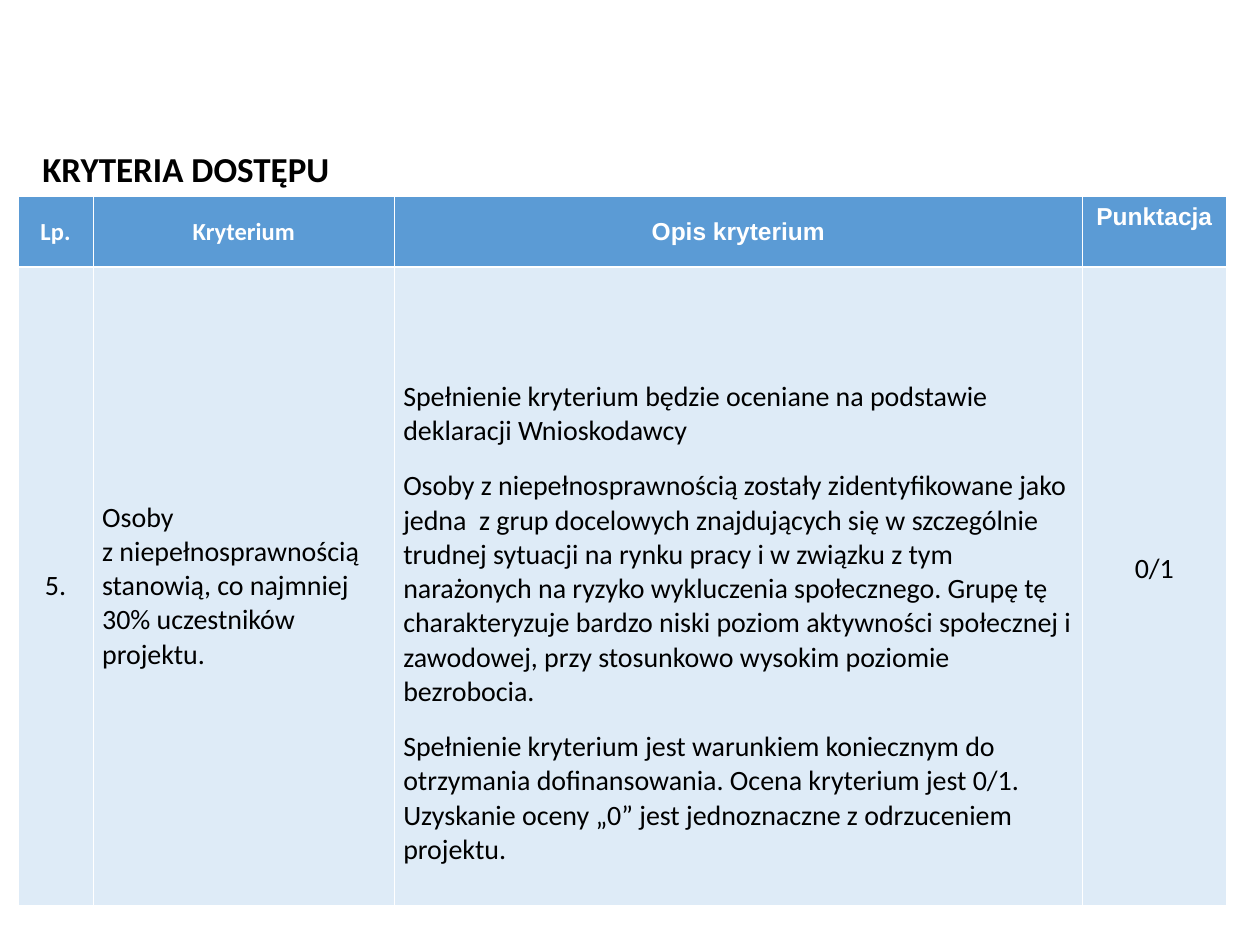
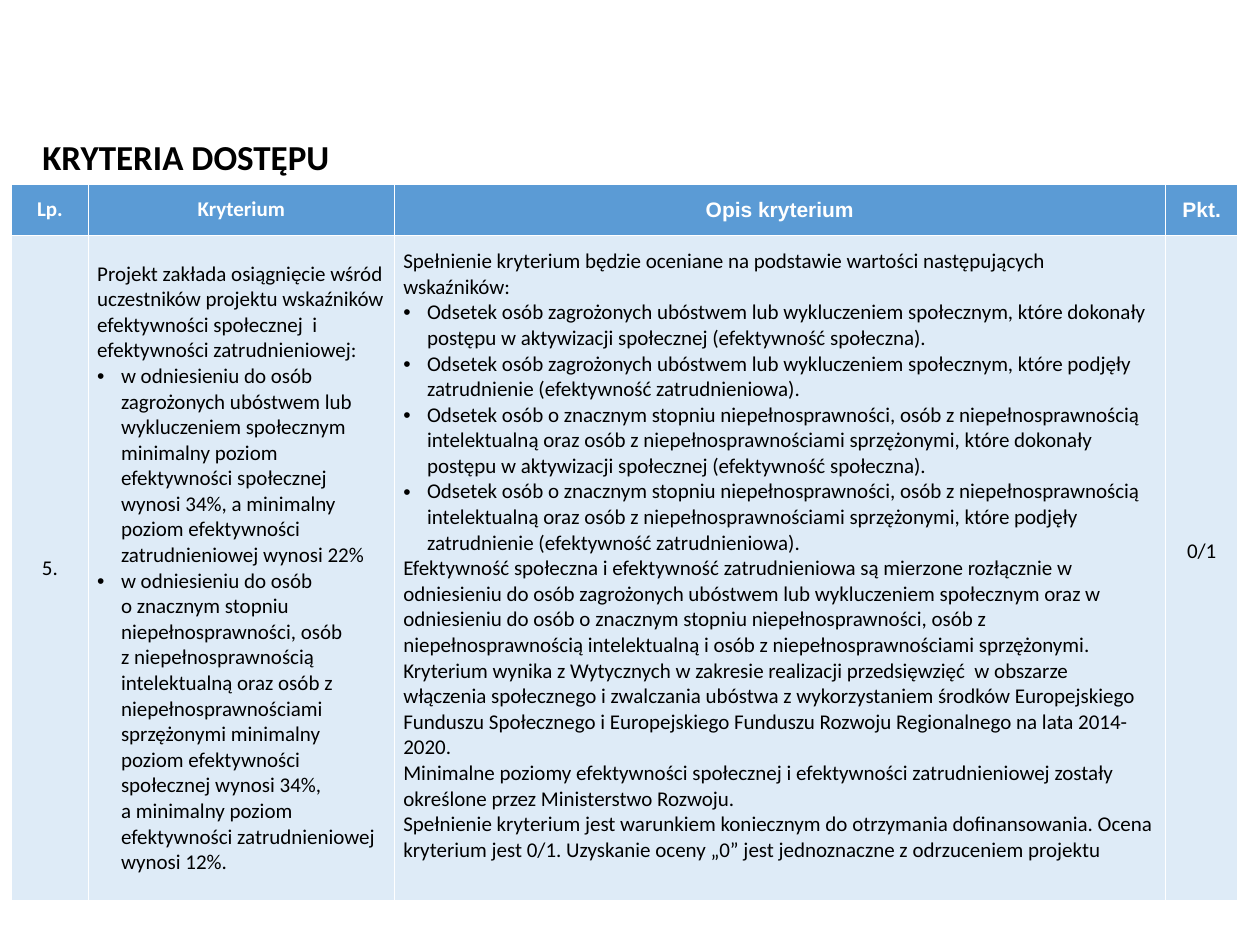
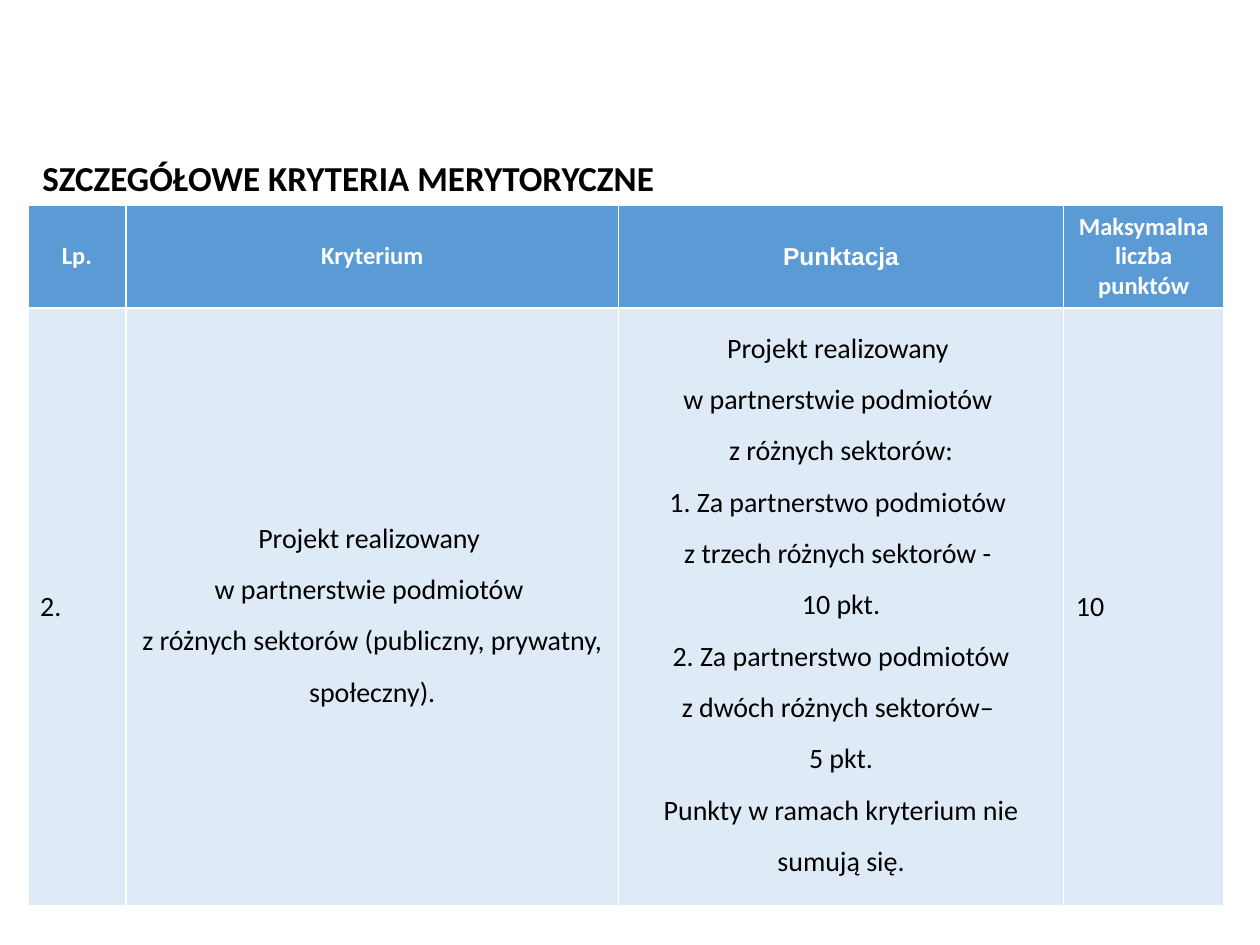
import copy

import lxml.etree
import pptx
import pptx.dml.color
import pptx.enum.text
import pptx.oxml.ns
import pptx.util

Cm, Pt = pptx.util.Cm, pptx.util.Pt
qn = pptx.oxml.ns.qn
ALIGN = pptx.enum.text.PP_ALIGN
ANCHOR = pptx.enum.text.MSO_ANCHOR

COLORS = {"text": "000000", "header": "5B9BD5", "header_text": "FFFFFF", "body": "DEEBF7"}
BULLET = "• "
TITLE_LEFT, TITLE_HEIGHT = 0.6, 1.12
TIGHT = (0.18, 0, 0.18, 0)
SCORE = {"text": ["0/1"], "align": ALIGN.CENTER, "margins": (0.18, 0, 0.18, 0.68)}

SLIDES = [
    {
        "title": "KRYTERIA DOSTĘPU", "title_width": 9.4,
        "at": (0.36, 3.96), "cols": (1.52, 6.07, 13.87, 2.9), "rows": (1.42, 12.87),
        "header_size": 14, "body_size": 16,
        "header": [
            {"text": ["Lp."]},
            {"text": ["Kryterium"]},
            {"text": ["Opis kryterium"], "font": "Arial"},
            {"text": ["Punktacja"], "font": "Arial", "anchor": ANCHOR.TOP},
        ],
        "body": [
            {"text": ["5."], "align": ALIGN.CENTER},
            {"text": ["Osoby \nz niepełnosprawnością stanowią, co najmniej \n30% uczestników projektu."],
             "margins": TIGHT},
            {"text": [
                "Spełnienie kryterium będzie oceniane na podstawie deklaracji Wnioskodawcy",
                "Osoby z niepełnosprawnością zostały zidentyfikowane jako jedna  z grup docelowych "
                "znajdujących się w szczególnie trudnej sytuacji na rynku pracy i w związku z tym "
                "narażonych na ryzyko wykluczenia społecznego. Grupę tę charakteryzuje bardzo niski "
                "poziom aktywności społecznej i zawodowej, przy stosunkowo wysokim poziomie bezrobocia.",
                "Spełnienie kryterium jest warunkiem koniecznym do otrzymania dofinansowania. Ocena "
                "kryterium jest 0/1. Uzyskanie oceny „0” jest jednoznaczne z odrzuceniem projektu.",
             ], "before": 12, "margins": (0.18, 1.5, 0.18, 0)},
            SCORE,
        ],
    },
    {
        "title": "KRYTERIA DOSTĘPU", "title_width": 9.4,
        "at": (0.23, 3.71), "cols": (1.55, 6.17, 15.54, 1.47), "rows": (1.04, 13.41),
        "header_size": 12, "body_size": 12,
        "header": [
            {"text": ["Lp."]},
            {"text": ["Kryterium"]},
            {"text": ["Opis kryterium"], "font": "Arial"},
            {"text": ["Pkt."], "font": "Arial"},
        ],
        "body": [
            {"text": ["5."], "align": ALIGN.CENTER},
            {"text": [
                "Projekt zakłada osiągnięcie wśród uczestników projektu wskaźników efektywności "
                "społecznej  i efektywności zatrudnieniowej:",
                "• w odniesieniu do osób zagrożonych ubóstwem lub wykluczeniem społecznym minimalny "
                "poziom efektywności społecznej wynosi 34%, a minimalny poziom efektywności "
                "zatrudnieniowej wynosi 22%",
                "• w odniesieniu do osób \no znacznym stopniu niepełnosprawności, osób \n"
                "z niepełnosprawnością intelektualną oraz osób z niepełnosprawnościami sprzężonymi "
                "minimalny poziom efektywności społecznej wynosi 34%, \n"
                "a minimalny poziom efektywności zatrudnieniowej wynosi 12%.",
             ], "margins": TIGHT},
            {"text": [
                "Spełnienie kryterium będzie oceniane na podstawie wartości następujących wskaźników:",
                "• Odsetek osób zagrożonych ubóstwem lub wykluczeniem społecznym, które dokonały "
                "postępu w aktywizacji społecznej (efektywność społeczna).",
                "• Odsetek osób zagrożonych ubóstwem lub wykluczeniem społecznym, które podjęły "
                "zatrudnienie (efektywność zatrudnieniowa).",
                "• Odsetek osób o znacznym stopniu niepełnosprawności, osób z niepełnosprawnością "
                "intelektualną oraz osób z niepełnosprawnościami sprzężonymi, które dokonały postępu "
                "w aktywizacji społecznej (efektywność społeczna).",
                "• Odsetek osób o znacznym stopniu niepełnosprawności, osób z niepełnosprawnością "
                "intelektualną oraz osób z niepełnosprawnościami sprzężonymi, które podjęły "
                "zatrudnienie (efektywność zatrudnieniowa).",
                "Efektywność społeczna i efektywność zatrudnieniowa są mierzone rozłącznie w "
                "odniesieniu do osób zagrożonych ubóstwem lub wykluczeniem społecznym oraz w "
                "odniesieniu do osób o znacznym stopniu niepełnosprawności, osób z "
                "niepełnosprawnością intelektualną i osób z niepełnosprawnościami sprzężonymi.",
                "Kryterium wynika z Wytycznych w zakresie realizacji przedsięwzięć  w obszarze "
                "włączenia społecznego i zwalczania ubóstwa z wykorzystaniem środków Europejskiego "
                "Funduszu Społecznego i Europejskiego Funduszu Rozwoju Regionalnego na lata 2014-2020.",
                "Minimalne poziomy efektywności społecznej i efektywności zatrudnieniowej zostały "
                "określone przez Ministerstwo Rozwoju.",
                "Spełnienie kryterium jest warunkiem koniecznym do otrzymania dofinansowania. Ocena "
                "kryterium jest 0/1. Uzyskanie oceny „0” jest jednoznaczne z odrzuceniem projektu",
             ], "margins": (0.18, 0, 0.18, 0.5)},
            SCORE,
        ],
    },
    {
        "title": "SZCZEGÓŁOWE KRYTERIA MERYTORYCZNE", "title_width": 23.75,
        "at": (0.56, 4.14), "cols": (1.98, 9.93, 8.97, 3.23), "rows": (2.03, 12.06),
        "header_size": 14, "body_size": 16,
        "header": [
            {"text": ["Lp."]},
            {"text": ["Kryterium"]},
            {"text": ["Punktacja"], "font": "Arial"},
            {"text": ["Maksymalna liczba punktów"]},
        ],
        "body": [
            {"text": ["2."]},
            {"text": ["Projekt realizowany \nw partnerstwie podmiotów \n"
                      "z różnych sektorów (publiczny, prywatny, społeczny)."],
             "align": ALIGN.CENTER, "spacing": 1.5, "margins": TIGHT},
            {"text": [
                "Projekt realizowany \nw partnerstwie podmiotów \nz różnych sektorów:\n"
                "1. Za partnerstwo podmiotów \nz trzech różnych sektorów - \n10 pkt.",
                "2. Za partnerstwo podmiotów\nz dwóch różnych sektorów– \n5 pkt.",
                "Punkty w ramach kryterium nie sumują się.",
             ], "align": ALIGN.CENTER, "spacing": 1.5, "anchor": ANCHOR.TOP},
            {"text": ["10"]},
        ],
    },
]


def rgb(name):
    return pptx.dml.color.RGBColor.from_string(COLORS[name])


def add_bullet(p):
    pPr = p._p.get_or_add_pPr()
    pPr.set("marL", str(Cm(0.48)))
    pPr.set("indent", str(-Cm(0.48)))
    lxml.etree.SubElement(pPr, qn("a:buFont"), typeface="Arial")
    lxml.etree.SubElement(pPr, qn("a:buChar"), char=BULLET.strip())


def write(tf, text, size, color="text", bold=False, font="Calibri", align=ALIGN.LEFT,
          before=0, spacing=None):
    for i, line in enumerate(text):
        p = tf.add_paragraph() if i else tf.paragraphs[0]
        p.text = line.removeprefix(BULLET)
        p.alignment = align
        p.space_before = Pt(before if i else 0)
        if spacing:
            p.line_spacing = spacing
        if line.startswith(BULLET):
            add_bullet(p)
        for r in p.runs:
            r.font.name, r.font.size, r.font.bold = font, Pt(size), bold
            r.font.color.rgb = rgb(color)
        for br in p._p.findall(qn("a:br")):
            br.append(copy.deepcopy(p.runs[0]._r.rPr))


def fill_cell(cell, fill, text, anchor=ANCHOR.MIDDLE, margins=(0.25, 0.13, 0.25, 0.13), **style):
    cell.fill.solid()
    cell.fill.fore_color.rgb = rgb(fill)
    cell.vertical_anchor = anchor
    cell.margin_left, cell.margin_top, cell.margin_right, cell.margin_bottom = map(Cm, margins)
    write(cell.text_frame, text, **style)


def add_title(s, text, top, width):
    sp = s.shapes.title
    sp.left, sp.top, sp.width, sp.height = map(Cm, (TITLE_LEFT, top, width, TITLE_HEIGHT))
    tf = sp.text_frame
    tf.word_wrap = True
    tf.auto_size = pptx.enum.text.MSO_AUTO_SIZE.NONE
    tf.vertical_anchor = ANCHOR.MIDDLE
    write(tf, [text], 20, bold=True)


def add_criteria(s, data):
    cols, rows = data["cols"], data["rows"]
    box = (*data["at"], sum(cols), sum(rows))
    table = s.shapes.add_table(len(rows), len(cols), *map(Cm, box)).table
    table.horz_banding = False
    for column, width in zip(table.columns, cols):
        column.width = Cm(width)
    for row, height in zip(table.rows, rows):
        row.height = Cm(height)
    for i, (head, body) in enumerate(zip(data["header"], data["body"])):
        fill_cell(table.cell(0, i), "header", size=data["header_size"], color="header_text",
                  bold=True, align=ALIGN.CENTER, **head)
        fill_cell(table.cell(1, i), "body", size=data["body_size"], **body)


def main():
    prs = pptx.Presentation()
    prs.slide_width, prs.slide_height = Cm(25.4), Cm(19.05)
    for data in SLIDES:
        s = prs.slides.add_slide(prs.slide_layouts[5])
        add_title(s, data["title"], data["at"][1] - TITLE_HEIGHT, data["title_width"])
        add_criteria(s, data)
    prs.save("out.pptx")


if __name__ == "__main__":
    main()
